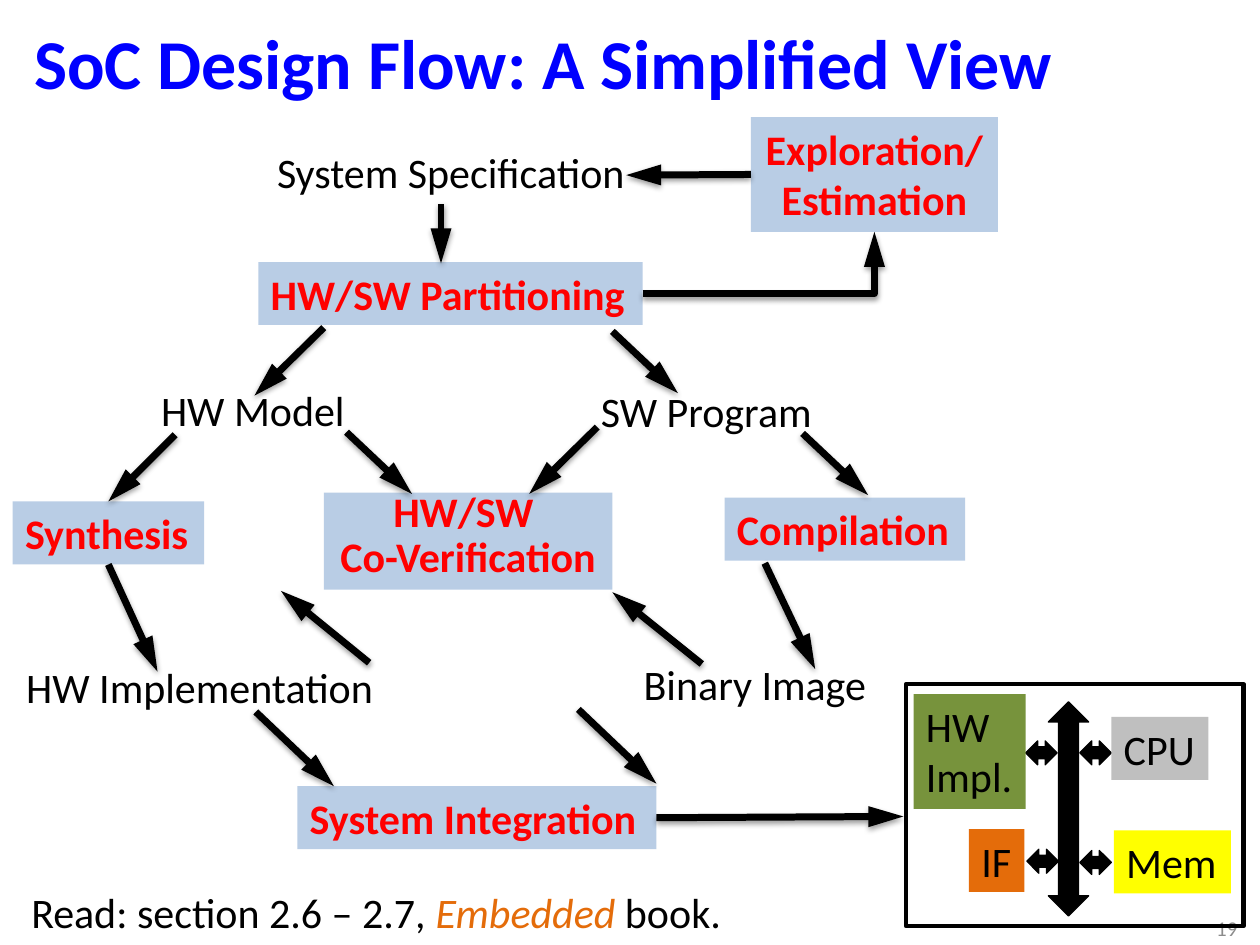
from lxml import etree
from pptx import Presentation, util as u
from pptx.dml.color import RGBColor
from pptx.enum import shapes as sh, text as tx
from pptx.oxml.ns import qn

BLACK = RGBColor(0x00, 0x00, 0x00)
BLUE = RGBColor(0x00, 0x00, 0xFF)
RED = RGBColor(0xFF, 0x00, 0x00)
PALE = RGBColor(0xB9, 0xCD, 0xE5)
DIM = RGBColor(0x8C, 0x8C, 0x8C)
GRAY = RGBColor(0xBF, 0xBF, 0xBF)
GREEN = RGBColor(0x77, 0x93, 0x3C)
YELLOW = RGBColor(0xFF, 0xFF, 0x00)
ORANGE = RGBColor(0xE4, 0x6C, 0x0A)
COLS, ROWS = 100, 75
TOP, LEFT, BOTTOM, RIGHT = range(4)


class Board:
    font, size, weight = "Calibri", 24, 4

    def __init__(self, deck):
        self.deck = deck
        self.slide = deck.slides.add_slide(deck.slide_layouts[5])
        self.pen = self.slide.shapes

    def grid(self, *spans):
        units = (self.deck.slide_width / COLS, self.deck.slide_height / ROWS)
        return [round(s * units[i % 2]) for i, s in enumerate(spans)]

    def ink(self, run, color, bold=False, ital=False, size=None):
        font = run.font
        font.name, font.size = self.font, u.Pt(size or self.size)
        font.bold, font.italic = bold, ital
        font.color.rgb = color

    def title(self, words, spot):
        box = self.slide.shapes.title
        box.left, box.top, box.width, box.height = self.grid(*spot)
        frame = box.text_frame
        frame.text = words
        frame.vertical_anchor = tx.MSO_ANCHOR.MIDDLE
        frame.paragraphs[0].alignment = tx.PP_ALIGN.LEFT
        self.ink(frame.paragraphs[0].runs[0], BLUE, True, size=40)

    def label(self, words, spot, fill=None, color=BLACK, bold=False,
              size=None, align=tx.PP_ALIGN.LEFT):
        box = self.pen.add_textbox(*self.grid(*spot))
        if fill is not None:
            box.fill.solid()
            box.fill.fore_color.rgb = fill
        frame = box.text_frame
        frame.text = words
        frame.word_wrap = False
        frame.auto_size = tx.MSO_AUTO_SIZE.SHAPE_TO_FIT_TEXT
        for par in frame.paragraphs:
            par.alignment = align
            for run in par.runs:
                self.ink(run, color, bold, size=size)
        return box

    def step(self, words, spot):
        align = tx.PP_ALIGN.CENTER if "\n" in words else tx.PP_ALIGN.LEFT
        return self.label(words, spot, PALE, RED, True, align=align)

    def number(self, words, spot):
        box = self.label(words, spot, color=DIM, size=12, align=tx.PP_ALIGN.RIGHT)
        box.text_frame.word_wrap = True
        box.text_frame.auto_size = tx.MSO_AUTO_SIZE.NONE
        box.text_frame.vertical_anchor = tx.MSO_ANCHOR.MIDDLE

    def arrow(self, ends, start=None, stop=None, bent=False):
        kind = sh.MSO_CONNECTOR.ELBOW if bent else sh.MSO_CONNECTOR.STRAIGHT
        link = self.pen.add_connector(kind, *self.grid(*ends))
        if start:
            link.begin_connect(*start)
        if stop:
            link.end_connect(*stop)
        if bent:
            link._element.spPr.find(qn("a:prstGeom")).set("prst", "bentConnector2")
        link.line.color.rgb = BLACK
        link.line.width = u.Pt(self.weight)
        etree.SubElement(link.line._get_or_add_ln(), qn("a:tailEnd"),
                         type="triangle", w="med", len="lg")

    def shape(self, kind, spot, fill, width):
        form = self.pen.add_shape(kind, *self.grid(*spot))
        form.shadow.inherit = False
        if fill is None:
            form.fill.background()
        else:
            form.fill.solid()
            form.fill.fore_color.rgb = fill
        form.line.color.rgb = BLACK
        form.line.width = u.Pt(width)

    def group(self):
        self.pen = self.slide.shapes.add_group_shape().shapes

    def leave(self):
        self.pen = self.slide.shapes


def main():
    deck = Presentation()
    deck.slide_width, deck.slide_height = u.Inches(10), u.Inches(7.5)
    board = Board(deck)
    board.title("SoC Design Flow: A Simplified View", (1.7, -0.1, 96.7, 10))
    board.number("19", (74.1, 72.3, 25.1, 2.7))

    for words, spot in (
        ("System Specification", (21, 11.1, 30.1, 5)),
        ("HW Model", (11.8, 30, 16.7, 5)),
        ("SW Program", (46.7, 30.1, 19.1, 5)),
        ("HW Implementation", (1.1, 52, 29.9, 5)),
        ("Binary Image", (50.1, 51.8, 19.9, 5)),
    ):
        board.label(words, spot)

    split = board.step("HW/SW Partitioning", (20.5, 20.8, 30.5, 5))
    synth = board.step("Synthesis", (1, 39.8, 15.2, 5))
    board.step("Compilation", (57.5, 39.5, 19.1, 5))
    check = board.step("HW/SW \nCo-Verification", (25.7, 39.1, 22.9, 7.7))
    for par in check.text_frame.paragraphs:
        par.line_spacing = 0.7
    check.text_frame.paragraphs[1].space_before = u.Pt(6)
    merge = board.step("System Integration", (23.6, 62.4, 28.5, 5))
    study = board.step("Exploration/\nEstimation", (59.6, 9.3, 19.6, 9.1))

    for ends in (
        (35, 16.2, 35, 20.9),
        (25.7, 26, 20.2, 31.4),
        (48.6, 26.3, 53.8, 31.2),
        (27.5, 34.3, 32.7, 39.2),
        (47.4, 33.9, 42, 39.2),
        (63.7, 34.4, 68.9, 39.3),
        (60.7, 44.7, 64.7, 53.1),
        (55.7, 52.7, 48.6, 47),
        (29.3, 52.6, 22.3, 46.9),
        (20.3, 56.5, 26.5, 62.4),
        (45.9, 56.3, 52.1, 62.2),
    ):
        board.arrow(ends)
    board.arrow((13.9, 34.5, 8.5, 39.8), stop=(synth, TOP))
    board.arrow((8.6, 44.8, 12.5, 53.3), start=(synth, BOTTOM))
    board.arrow((51, 23.3, 69.4, 18.4), (split, RIGHT), (study, BOTTOM), True)
    board.arrow((59.6, 13.9, 49.7, 13.9), start=(study, LEFT))

    board.group()
    board.shape(sh.MSO_SHAPE.UP_DOWN_ARROW, (83.2, 55.7, 3.2, 17), BLACK, 0.75)
    for col, row in ((85.7, 58.8), (85.7, 67.5), (81.4, 58.8), (81.5, 67.4)):
        board.shape(sh.MSO_SHAPE.LEFT_RIGHT_ARROW, (col, row, 2.5, 1.9), BLACK, 0.75)
    for words, spot, fill in (
        ("CPU", (88.2, 56.9, 7.7, 5), GRAY),
        ("Mem", (88.4, 65.9, 9.3, 5), YELLOW),
        ("HW\nImpl.", (72.5, 55.1, 8.9, 9.1), GREEN),
        ("IF", (76.9, 65.8, 4.4, 5), ORANGE),
    ):
        board.label(words, spot, fill)
    board.shape(sh.MSO_SHAPE.RECTANGLE, (71.9, 54.3, 26.8, 19.2), None, 2.5)
    board.leave()

    board.arrow((52.1, 64.9, 71.7, 64.8), start=(merge, RIGHT))
    note = board.label("Read: section 2.6 – 2.7, ", (1.5, 69.9, 57.7, 5))
    for words, color, ital in (("Embedded", ORANGE, True), (" book.", BLACK, False)):
        run = note.text_frame.paragraphs[0].add_run()
        run.text = words
        board.ink(run, color, ital=ital)

    deck.save("out.pptx")


if __name__ == "__main__":
    main()
